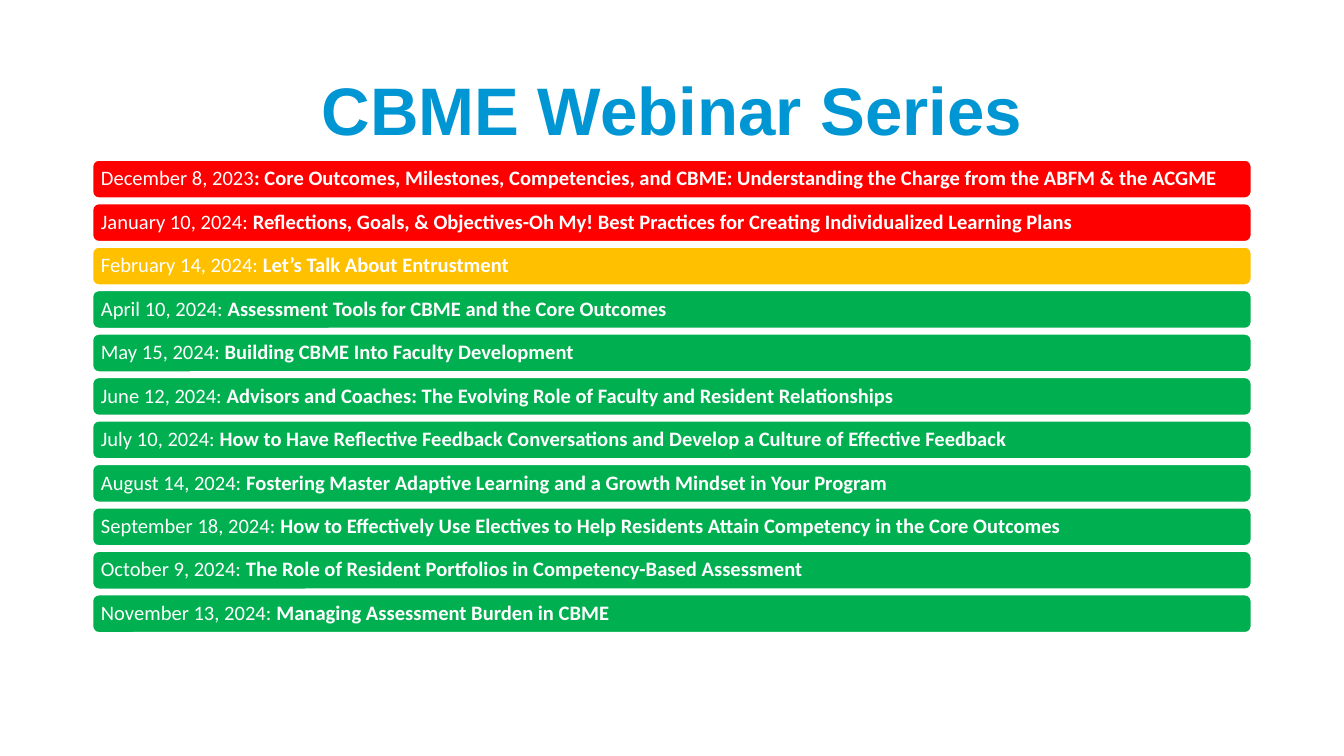
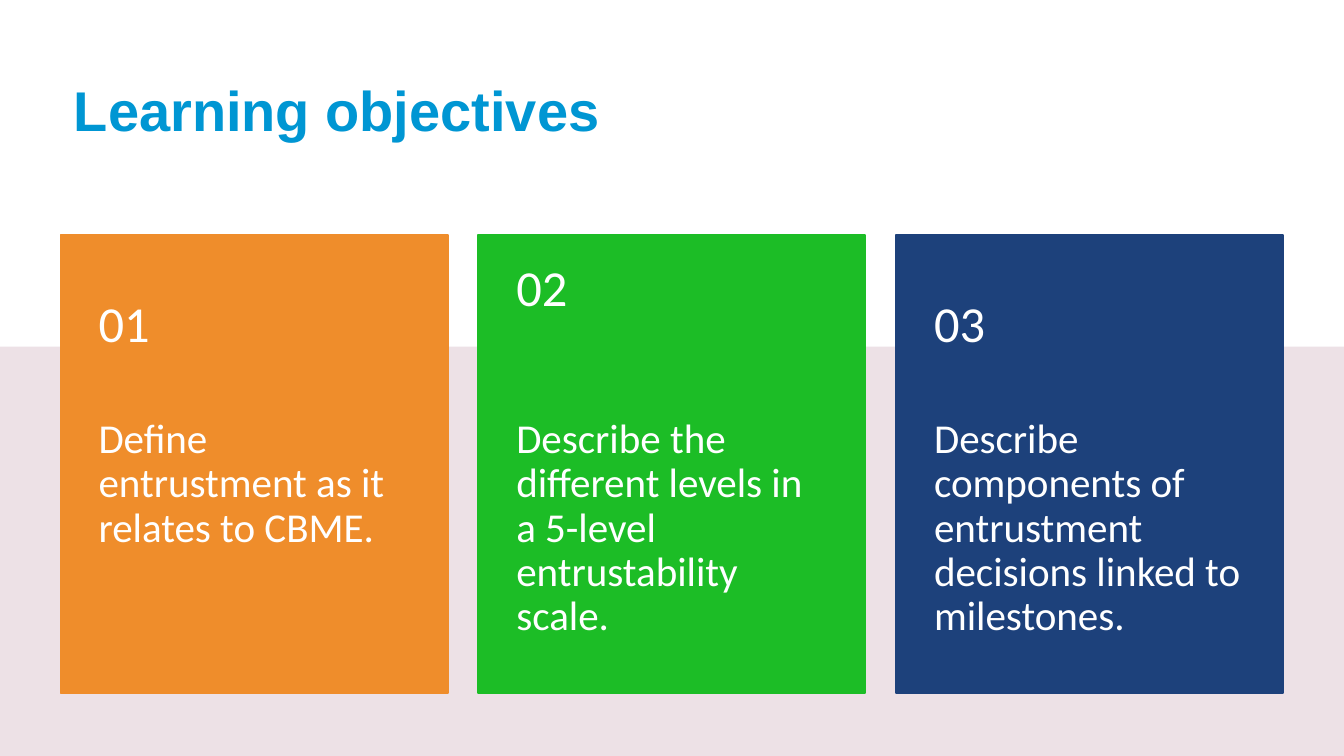
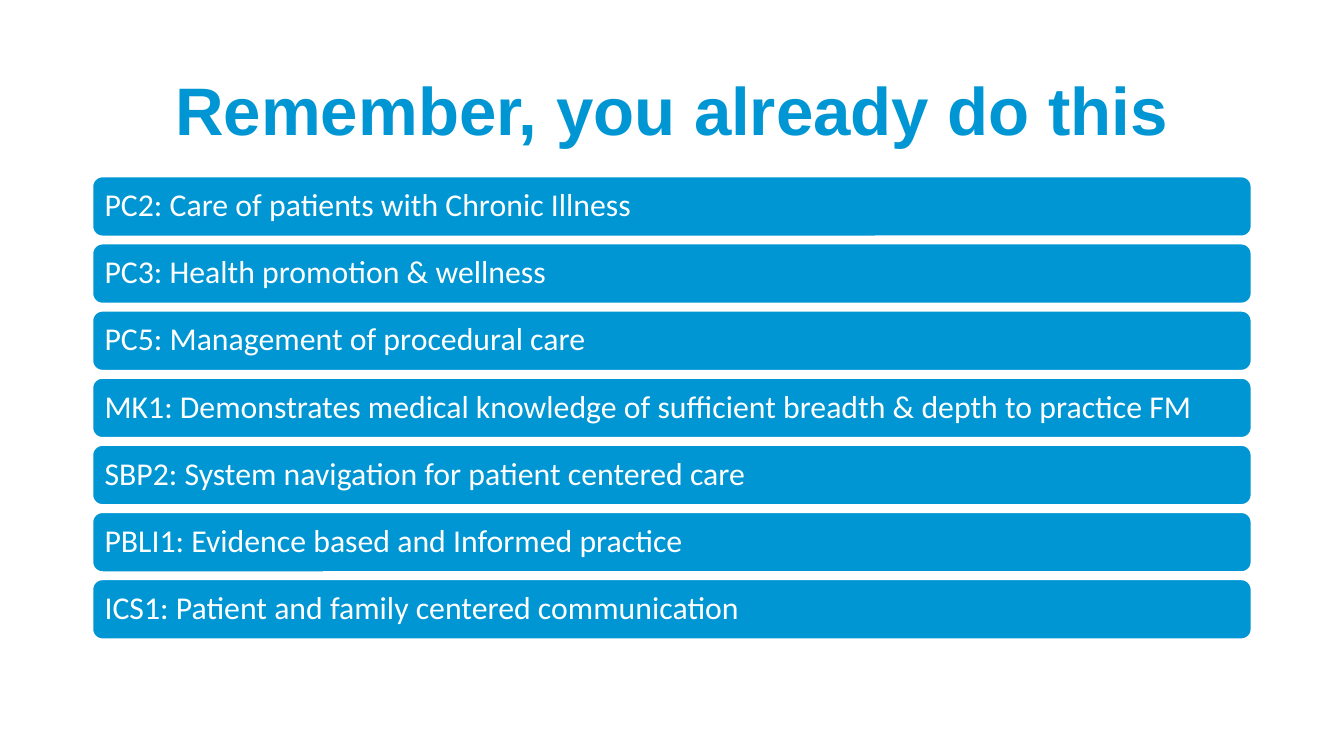
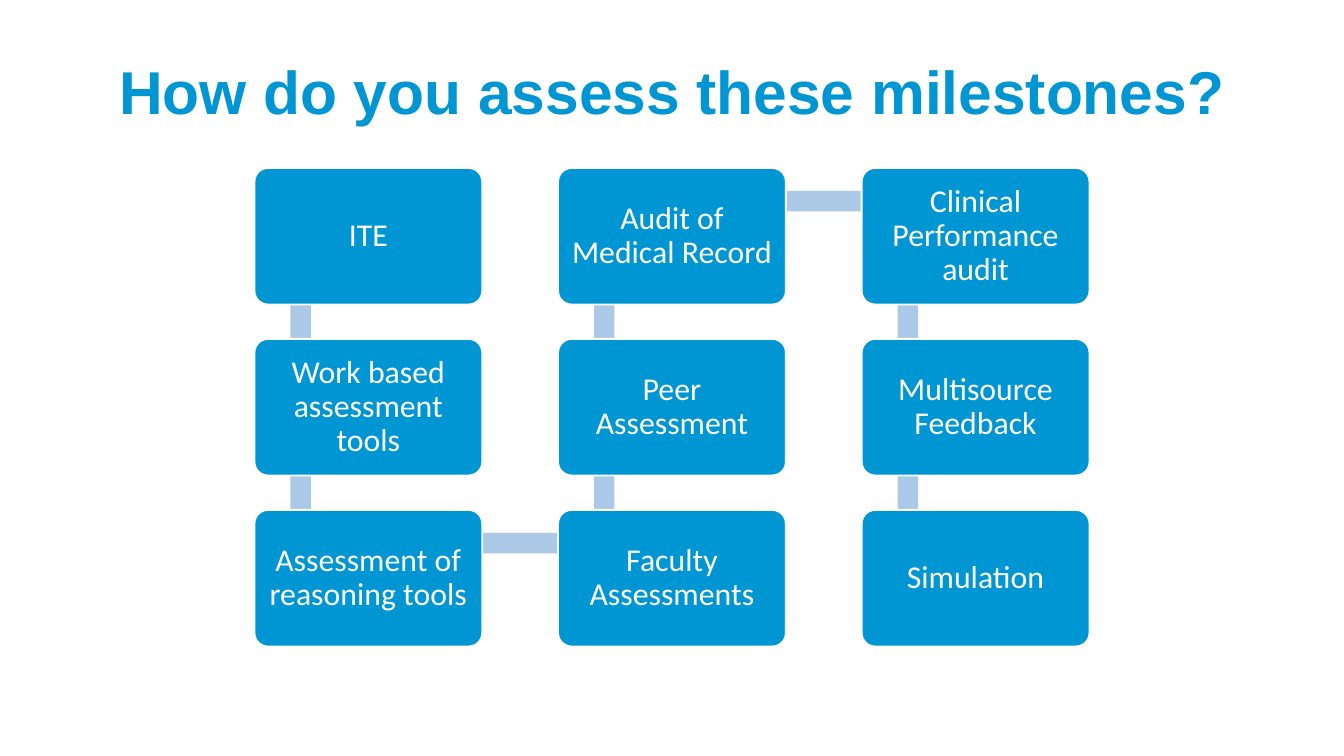
from dataclasses import dataclass

from lxml import etree
from pptx import Presentation
from pptx.dml.color import RGBColor
from pptx.enum.shapes import MSO_SHAPE
from pptx.enum.text import MSO_ANCHOR, MSO_AUTO_SIZE, PP_ALIGN
from pptx.oxml.ns import qn
from pptx.util import Pt

RECTANGLE = MSO_SHAPE.RECTANGLE
ROUNDED = MSO_SHAPE.ROUNDED_RECTANGLE
TOP, MIDDLE = MSO_ANCHOR.TOP, MSO_ANCHOR.MIDDLE
LEFT, CENTER = PP_ALIGN.LEFT, PP_ALIGN.CENTER
TITLE_ONLY = 5
SLIDE_WIDTH, SLIDE_HEIGHT = 720, 405


@dataclass(frozen=True)
class Theme:
    title_font: str = "Arial"
    body_font: str = "Calibri"
    blue: str = "0096D3"
    white: str = "FFFFFF"
    red: str = "FF0000"
    amber: str = "FFC000"
    green: str = "00B050"
    orange: str = "EF8D2B"
    lime: str = "1CBD26"
    navy: str = "1D417B"
    link: str = "ABC9E6"
    grey: str = "F2F2F2"
    wash: str = "B20D4A"
    title_size: float = 36
    long_title_size: float = 32.4
    left_title_size: float = 30
    number_size: float = 27
    card_size: float = 22
    body_size: float = 17
    schedule_size: float = 11
    line_spacing: float = 0.9


THEME = Theme()
TITLE_BOX = (49.5, 21.8, 621, 78.3)

WEBINARS = [
    (THEME.red, "December 8, 2023", ": Core Outcomes, Milestones, Competencies, and CBME: "
     "Understanding the Charge from the ABFM & the ACGME"),
    (THEME.red, "January 10, 2024: ", "Reflections, Goals, & Objectives-Oh My! "
     "Best Practices for Creating Individualized Learning Plans"),
    (THEME.amber, "February 14, 2024: ", "Let’s Talk About Entrustment"),
    (THEME.green, "April 10, 2024: ", "Assessment Tools for CBME and the Core Outcomes"),
    (THEME.green, "May 15, 2024: ", "Building CBME Into Faculty Development"),
    (THEME.green, "June 12, 2024: ", "Advisors and Coaches: The Evolving Role of Faculty "
     "and Resident Relationships"),
    (THEME.green, "July 10, 2024: ", "How to Have Reflective Feedback Conversations "
     "and Develop a Culture of Effective Feedback"),
    (THEME.green, "August 14, 2024: ", "Fostering Master Adaptive Learning "
     "and a Growth Mindset in Your Program"),
    (THEME.green, "September 18, 2024: ", "How to Effectively Use Electives to Help Residents "
     "Attain Competency in the Core Outcomes"),
    (THEME.green, "October 9, 2024: ", "The Role of Resident Portfolios "
     "in Competency-Based Assessment"),
    (THEME.green, "November 13, 2024: ", "Managing Assessment Burden in CBME"),
]

OBJECTIVES = [
    (THEME.orange, "01", 13, "Define entrustment as it relates to CBME."),
    (THEME.lime, "02", 52, "Describe the different levels in a 5-level entrustability scale."),
    (THEME.navy, "03", 13, "Describe components of entrustment decisions linked to milestones."),
]

MILESTONES = [
    "PC2: Care of patients with Chronic Illness",
    "PC3: Health promotion & wellness",
    "PC5: Management of procedural care",
    "MK1: Demonstrates medical knowledge of sufficient breadth & depth to practice FM",
    "SBP2: System navigation for patient centered care",
    "PBLI1: Evidence based and Informed practice",
    "ICS1: Patient and family centered communication",
]

ASSESSMENTS = [
    "ITE", "Work based assessment tools", "Assessment of reasoning tools",
    "Faculty Assessments", "Peer Assessment", "Audit of Medical Record",
    "Clinical Performance audit", "Multisource Feedback", "Simulation",
]


def points(*lengths):
    return [Pt(length) for length in lengths]


def add_block(slide, kind, box, fill, line=None):
    shape = slide.shapes.add_shape(kind, *points(*box))
    shape.shadow.inherit = False
    shape.fill.solid()
    shape.fill.fore_color.rgb = RGBColor.from_string(fill)
    if line:
        shape.line.color.rgb = RGBColor.from_string(line)
        shape.line.width = Pt(1)
    else:
        shape.line.fill.background()
    return shape


def write(shape, parts, size, insets, anchor=MIDDLE, align=LEFT,
          font=THEME.body_font, color=THEME.white):
    frame = shape.text_frame
    frame.auto_size = MSO_AUTO_SIZE.NONE
    frame.word_wrap = True
    frame.vertical_anchor = anchor
    (frame.margin_left, frame.margin_top,
     frame.margin_right, frame.margin_bottom) = points(*insets)
    paragraph = frame.paragraphs[0]
    paragraph.alignment = align
    paragraph.line_spacing = THEME.line_spacing
    for text, bold in parts:
        run = paragraph.add_run()
        run.text = text
        run.font.name = font
        run.font.size = Pt(size)
        run.font.bold = bold
        run.font.color.rgb = RGBColor.from_string(color)


def add_titled_slide(presentation, title, box=TITLE_BOX, size=THEME.title_size, align=CENTER):
    slide = presentation.slides.add_slide(presentation.slide_layouts[TITLE_ONLY])
    shape = slide.shapes.title
    shape.left, shape.top, shape.width, shape.height = points(*box)
    write(shape, [(title, True)], size, (7.2, 3.6, 7.2, 3.6), align=align,
          font=THEME.title_font, color=THEME.blue)
    return slide


def add_bars(slide, box, rows, gap, size, inset):
    left, top, width, height = box
    bar_height = (height - gap * (len(rows) - 1)) / len(rows)
    for index, (fill, parts) in enumerate(rows):
        bar_box = (left, top + index * (bar_height + gap), width, bar_height)
        bar = add_block(slide, ROUNDED, bar_box, fill, THEME.white)
        write(bar, parts, size, (inset,) * 4)


def add_backdrop(slide, split):
    full = (0, 0, SLIDE_WIDTH, SLIDE_HEIGHT)
    add_block(slide, RECTANGLE, full, THEME.grey)
    wash = add_block(slide, RECTANGLE, full, THEME.wash)
    color = wash.fill._xPr.find(qn("a:solidFill"))[0]
    etree.SubElement(color, qn("a:alpha")).set("val", "7000")
    add_block(slide, RECTANGLE, (0, 0, SLIDE_WIDTH, split), THEME.white)


def add_card(slide, box, fill, number, number_bottom, text):
    left, top, width, height = box
    number_height = height * 0.4
    card = add_block(slide, RECTANGLE, box, fill, fill)
    write(card, [(text, False)], THEME.card_size, (20.4, number_height, 20.4, 26), anchor=TOP)
    label = slide.shapes.add_textbox(*points(left, top, width, number_height))
    write(label, [(number, False)], THEME.number_size, (20.4, 13, 20.4, number_bottom))


def add_snake(slide, box, texts, rows=3, columns=3):
    left, top, width, height = box
    tile_width, tile_height, thickness = 122.1, 73.2, 11
    column_step = (width - tile_width) / (columns - 1)
    row_step = (height - tile_height) / (rows - 1)
    corners = []
    for index in range(len(texts)):
        column, offset = divmod(index, rows)
        row = rows - 1 - offset if column % 2 else offset
        corners.append((left + column * column_step, top + row * row_step))
    for (x, y), (next_x, next_y) in zip(corners, corners[1:]):
        if x == next_x:
            link_box = (x + 19.3, min(y, next_y) + 18, thickness, row_step)
        else:
            link_box = (x + 25.2, y + 12.3, column_step, thickness)
        add_block(slide, RECTANGLE, link_box, THEME.link)
    for (x, y), text in zip(corners, texts):
        tile = add_block(slide, ROUNDED, (x, y, tile_width, tile_height), THEME.blue, THEME.white)
        tile.adjustments[0] = 0.1
        write(tile, [(text, False)], THEME.body_size, (5,) * 4, align=CENTER)


def build_schedule(presentation):
    slide = add_titled_slide(presentation, "CBME Webinar Series")
    rows = [(fill, [(date, False), (topic, True)]) for fill, date, topic in WEBINARS]
    add_bars(slide, (49.5, 85.7, 621, 253.4), rows, 2.7, THEME.schedule_size, 3.6)


def build_objectives(presentation):
    slide = add_titled_slide(presentation, "Learning objectives", (32.4, 21.8, 655.2, 78.3),
                             THEME.left_title_size, LEFT)
    add_backdrop(slide, 185.7)
    title = slide.shapes.title._element
    title.getparent().append(title)
    for index, objective in enumerate(OBJECTIVES):
        add_card(slide, (32.4 + index * 223.8, 125.8, 207.4, 245.6), *objective)


def build_milestones(presentation):
    slide = add_titled_slide(presentation, "Remember, you already do this")
    rows = [(THEME.blue, [(text, False)]) for text in MILESTONES]
    add_bars(slide, (49.5, 94.5, 621, 248), rows, 3.8, THEME.body_size, 5)


def build_assessments(presentation):
    slide = add_titled_slide(presentation, "How do you assess these milestones?",
                             (49.5, 11.5, 621, 78.3), THEME.long_title_size)
    add_snake(slide, (136.3, 90, 447.4, 256.4), ASSESSMENTS)


def main():
    presentation = Presentation()
    presentation.slide_width = Pt(SLIDE_WIDTH)
    presentation.slide_height = Pt(SLIDE_HEIGHT)
    build_schedule(presentation)
    build_objectives(presentation)
    build_milestones(presentation)
    build_assessments(presentation)
    presentation.save("out.pptx")


if __name__ == "__main__":
    main()
